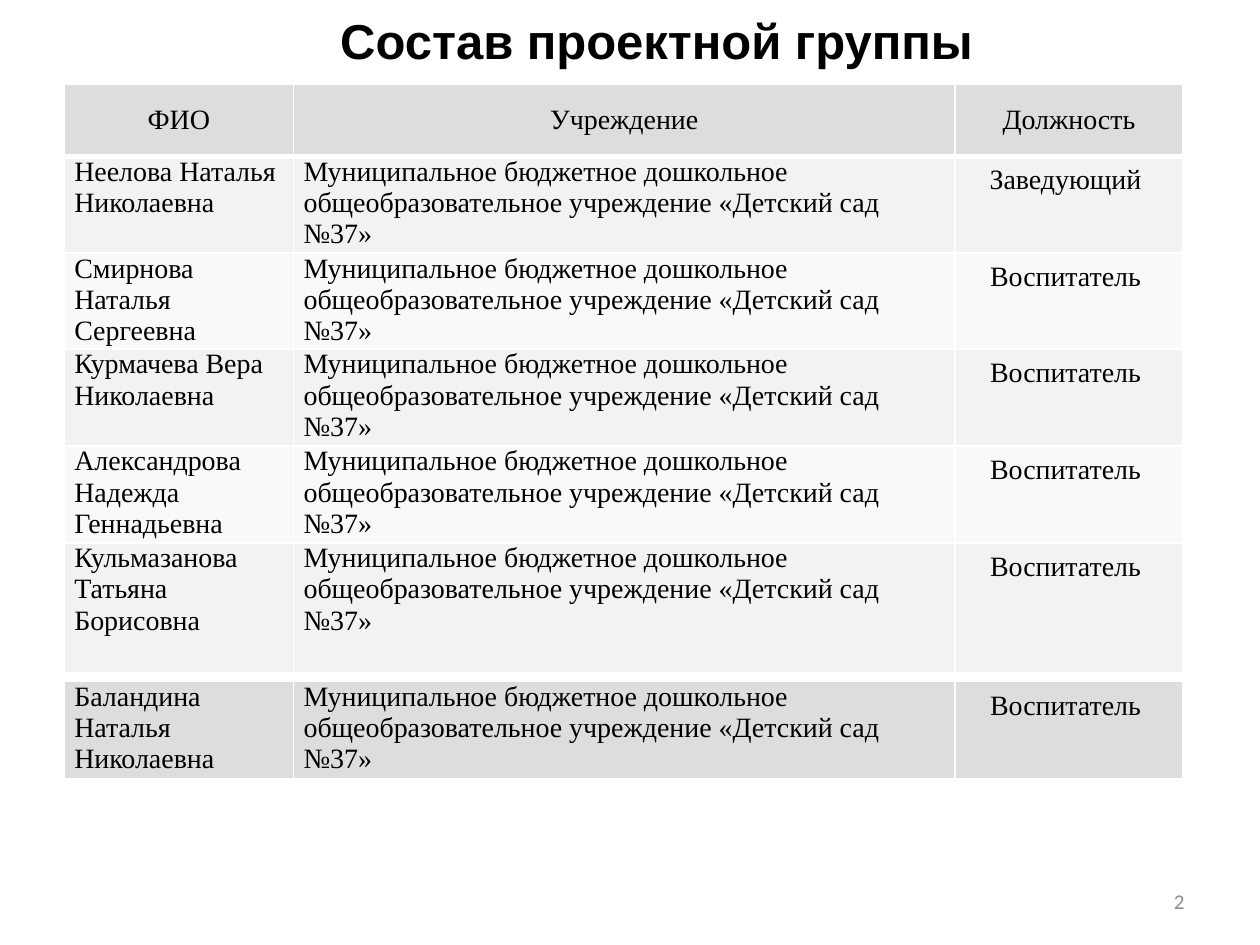
from dataclasses import dataclass
from itertools import cycle

from lxml import etree
from pptx import Presentation
from pptx.dml.color import RGBColor
from pptx.enum.text import MSO_ANCHOR, MSO_AUTO_SIZE, PP_ALIGN
from pptx.oxml.ns import qn
from pptx.util import Inches, Pt

LEFT, MID, RIGHT = PP_ALIGN.LEFT, PP_ALIGN.CENTER, PP_ALIGN.RIGHT
TOP, CENTRE = MSO_ANCHOR.TOP, MSO_ANCHOR.MIDDLE
FIXED = MSO_AUTO_SIZE.NONE


@dataclass(frozen=True)
class Theme:
    ink: str = "000000"
    pale: str = "8C8C8C"
    line: str = "FFFFFF"
    head: str = "DDDDDD"
    bands: tuple = ("F2F2F2", "F9F9F9")
    title: int = 28
    body: int = 16
    note: int = 12
    thin: int = 1
    thick: int = 3


@dataclass(frozen=True)
class Row:
    cells: tuple
    high: float
    fill: str
    head: bool = False
    top: int = 1
    foot: int = 1


LOOK = Theme()

# Grid in inches
EDGE = 0.51
COLS = (1.82, 5.25, 1.81)
TIGHT, ROOMY = (0.08, 0), (0.15, 0.07)

# Content
PLACE = "Муниципальное бюджетное дошкольное общеобразовательное учреждение «Детский сад №37»"
TUTOR = "Воспитатель "
HEAD = ("ФИО", "Учреждение", "Должность")
STAFF = (
    ("Неелова Наталья Николаевна", "Заведующий ", 0.77),
    ("Смирнова Наталья Сергеевна", TUTOR, 0.76),
    ("Курмачева Вера Николаевна", TUTOR, 0.77),
    ("Александрова Надежда Геннадьевна", TUTOR, 0.77),
    ("Кульмазанова Татьяна Борисовна", TUTOR, 1.03),
)
LAST = ("Баландина Наталья Николаевна", PLACE, TUTOR)


def write(frame, text: str, *, size: int = LOOK.body, font: str = "Times New Roman",
          color: str = LOOK.ink, bold: bool = False, align=LEFT) -> None:
    para = frame.paragraphs[0]
    para.alignment = align
    run = para.add_run()
    run.text = text
    run.font.size, run.font.name, run.font.bold = Pt(size), font, bold
    run.font.color.rgb = RGBColor.from_string(color)


def border(cell, top: int, foot: int) -> None:
    props = cell._tc.get_or_add_tcPr()
    sides = {"lnL": LOOK.thin, "lnR": LOOK.thin, "lnT": top, "lnB": foot}
    for spot, (side, width) in enumerate(sides.items()):
        line = etree.Element(qn(f"a:{side}"), w=str(Pt(width)))
        fill = etree.SubElement(line, qn("a:solidFill"))
        etree.SubElement(fill, qn("a:srgbClr"), val=LOOK.line)
        props.insert(spot, line)


def draw_row(cells, row: Row) -> None:
    for col, (cell, text) in enumerate(zip(cells, row.cells)):
        roomy = row.head or col == 2
        side, edge = ROOMY if roomy else TIGHT
        cell.margin_left = cell.margin_right = Inches(side)
        cell.margin_top = cell.margin_bottom = Inches(edge)
        cell.vertical_anchor = CENTRE if row.head else TOP
        write(cell.text_frame, text, align=MID if roomy else LEFT)
        cell.fill.solid()
        cell.fill.fore_color.rgb = RGBColor.from_string(row.fill)
        border(cell, row.top, row.foot)


def draw_table(slide, top: float, rows: list[Row]) -> None:
    high = sum(row.high for row in rows)
    table = slide.shapes.add_table(len(rows), len(COLS), Inches(EDGE), Inches(top),
                                   Inches(sum(COLS)), Inches(high)).table
    table.first_row = table.horz_banding = False
    for col, wide in zip(table.columns, COLS):
        col.width = Inches(wide)
    for line, row in zip(table.rows, rows):
        line.height = Inches(row.high)
        draw_row(line.cells, row)


def main() -> None:
    deck = Presentation()
    deck.slide_width, deck.slide_height = Inches(10), Inches(7.5)
    slide = deck.slides.add_slide(deck.slide_layouts[5])

    # Title
    title = slide.shapes.title
    title.left, title.top, title.width, title.height = map(Inches, (2.19, 0.03, 6.04, 0.57))
    frame = title.text_frame
    frame.vertical_anchor, frame.auto_size = TOP, FIXED
    write(frame, "Состав проектной группы", size=LOOK.title, font="Arial",
          bold=True, align=MID)

    # Main table, then the separate last row
    rows = [Row(HEAD, 0.57, LOOK.head, head=True, foot=LOOK.thick)]
    for (name, post, high), fill in zip(STAFF, cycle(LOOK.bands)):
        edge = LOOK.thick if len(rows) == 1 else LOOK.thin
        rows.append(Row((name, PLACE, post), high, fill, top=edge))
    draw_table(slide, 0.67, rows)
    draw_table(slide, 5.41, [Row(LAST, 0.78, LOOK.head, foot=LOOK.thick)])

    # Page number
    box = slide.shapes.add_textbox(*map(Inches, (7.17, 6.95, 2.33, 0.4)))
    box.text_frame.word_wrap = True
    box.text_frame.vertical_anchor = CENTRE
    write(box.text_frame, "2", size=LOOK.note, font="Calibri", color=LOOK.pale, align=RIGHT)

    deck.save("out.pptx")


if __name__ == "__main__":
    main()
